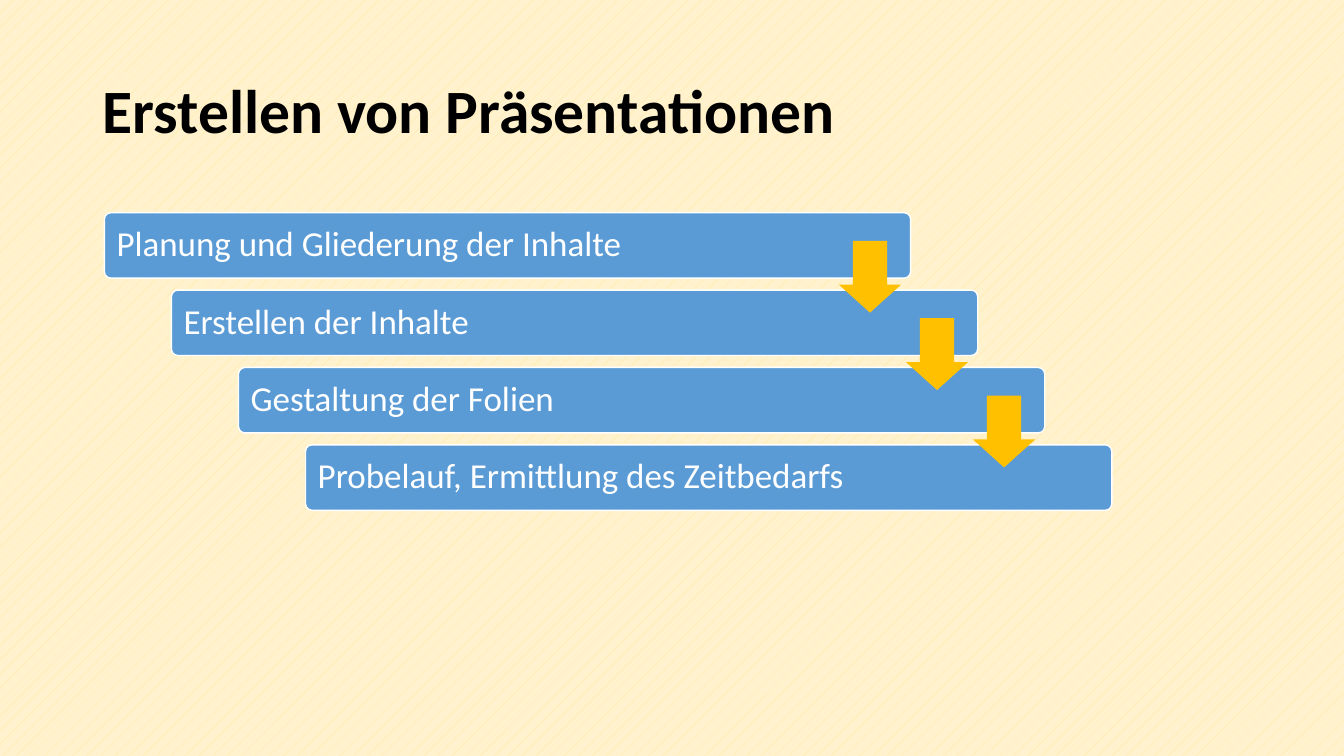
from pptx import Presentation
from pptx.dml.color import RGBColor
from pptx.enum.dml import MSO_PATTERN as Pattern
from pptx.enum.shapes import MSO_SHAPE as Shape
from pptx.enum.text import MSO_ANCHOR as Anchor, PP_ALIGN as Align
from pptx.util import Cm, Pt


def color(code):
    return RGBColor.from_string(code)


def write(shape, text, size, tint, inset, bold=False):
    frame = shape.text_frame
    frame.word_wrap = True
    frame.vertical_anchor = Anchor.MIDDLE
    frame.margin_left = frame.margin_right = Cm(inset)
    para = frame.paragraphs[0]
    para.alignment = Align.LEFT
    para.line_spacing = 0.9
    run = para.add_run()
    run.text = text
    font = run.font
    font.name, font.size, font.bold = "Calibri", Pt(size), bold
    font.color.rgb = color(tint)


deck = Presentation()
deck.slide_width, deck.slide_height = Cm(33.87), Cm(19.05)
slide = deck.slides.add_slide(deck.slide_layouts[6])
shapes = slide.shapes

# Background
fill = slide.background.fill
fill.patterned()
fill.pattern = Pattern.PERCENT_5
fill.fore_color.rgb = color("FFE699")
fill.back_color.rgb = color("FFF2CC")

# Title
title = shapes.add_textbox(Cm(2.33), Cm(1.01), Cm(29.21), Cm(3.68))
write(title, "Erstellen von Präsentationen", 44, "000000", 0.25, bold=True)

# Staircase of steps
steps = [
    "Planung und Gliederung der Inhalte",
    "Erstellen der Inhalte",
    "Gestaltung der Folien",
    "Probelauf, Ermittlung des Zeitbedarfs",
]
shift, drop = 1.69, 1.95
for i, step in enumerate(steps):
    bar = shapes.add_shape(Shape.ROUNDED_RECTANGLE, Cm(2.63 + i * shift),
                           Cm(5.36 + i * drop), Cm(20.32), Cm(1.65))
    bar.adjustments[0] = 0.1
    bar.shadow.inherit = False
    bar.fill.solid()
    bar.fill.fore_color.rgb = color("5B9BD5")
    bar.line.color.rgb = color("FFFFFF")
    bar.line.width = Pt(1)
    write(bar, step, 25, "FFFFFF", 0.26)

# Arrows from each step to the next
for i in range(len(steps) - 1):
    arrow = shapes.add_shape(Shape.DOWN_ARROW, Cm(21.14 + i * shift),
                             Cm(6.07 + i * drop), Cm(1.57), Cm(1.81))
    arrow.adjustments[0] = 0.45
    arrow.adjustments[1] = 0.55
    arrow.adjustments[0], arrow.adjustments[1] = 0.55, 0.45
    arrow.shadow.inherit = False
    arrow.fill.solid()
    arrow.fill.fore_color.rgb = color("FFC000")
    arrow.line.fill.background()

deck.save("out.pptx")
